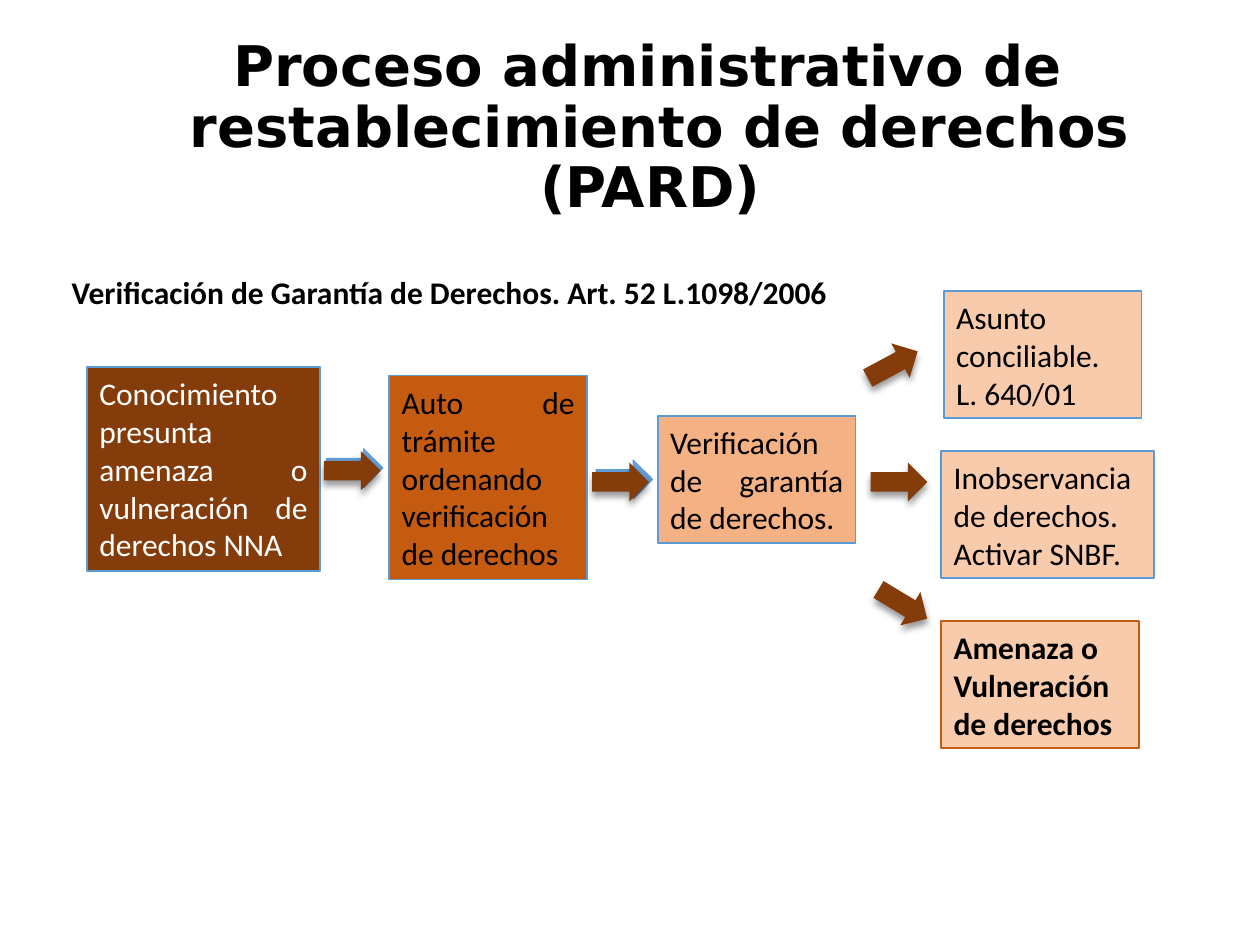
"""Builds the slide on the administrative process for restoring rights."""
from lxml.etree import SubElement
from pptx import Presentation
from pptx.dml.color import RGBColor
from pptx.enum.shapes import MSO_SHAPE as SHAPE
from pptx.enum.text import MSO_ANCHOR as ANCHOR, MSO_AUTO_SIZE as FIT, PP_ALIGN as ALIGN
from pptx.oxml.ns import qn
from pptx.util import Inches, Pt

COLORS = {
    "black": "000000",
    "white": "FFFFFF",
    "brown": "843C0B",
    "rust": "C55A11",
    "orange": "F4B183",
    "peach": "F8CBAD",
    "blue": "5B9BD5",
    "blue_light": "71A6DB",
    "blue_dark": "448ACA",
}


def rgb(name):
    return RGBColor.from_string(COLORS[name])


def write(tf, text, size=18, font="Calibri", color="black", bold=False,
          align=ALIGN.LEFT, spacing=None):
    tf.word_wrap = True
    for i, line in enumerate(text.split("\n")):
        p = tf.paragraphs[0] if i == 0 else tf.add_paragraph()
        p.alignment = align
        p.line_spacing = spacing
        r = p.add_run()
        r.text = line
        r.font.size = Pt(size)
        r.font.name = font
        r.font.bold = bold
        r.font.color.rgb = rgb(color)


class Deck:
    arrow_size = (0.45, 0.31)

    def __init__(self, prs):
        self.slide = prs.slides.add_slide(prs.slide_layouts[5])

    def title(self, text, x, y, w, h):
        sp = self.slide.shapes.title
        sp.left, sp.top, sp.width, sp.height = map(Inches, (x, y, w, h))
        tf = sp.text_frame
        write(tf, text, size=32, font="DejaVu Sans", bold=True,
              align=ALIGN.CENTER, spacing=0.9)
        tf.auto_size = FIT.NONE
        tf.vertical_anchor = ANCHOR.MIDDLE
        pPr = tf.paragraphs[0]._p.get_or_add_pPr()
        pPr.set("marL", str(Inches(0.2)))
        pPr.set("indent", str(Inches(-0.2)))

    def label(self, text, x, y, w, h, **style):
        sp = self.slide.shapes.add_textbox(*map(Inches, (x, y, w, h)))
        write(sp.text_frame, text, **style)
        sp.text_frame.auto_size = FIT.SHAPE_TO_FIT_TEXT

    def shape(self, kind, x, y, w, h):
        sp = self.slide.shapes.add_shape(kind, *map(Inches, (x, y, w, h)))
        sp.shadow.inherit = False
        return sp

    def box(self, text, x, y, w, h, fill, line="blue", **style):
        sp = self.shape(SHAPE.RECTANGLE, x, y, w, h)
        sp.fill.solid()
        sp.fill.fore_color.rgb = rgb(fill)
        sp.line.color.rgb = rgb(line)
        sp.line.width = Pt(1)
        write(sp.text_frame, text, **style)
        sp.text_frame.auto_size = FIT.SHAPE_TO_FIT_TEXT

    def back_arrow(self, x, y):
        sp = self.shape(SHAPE.RIGHT_ARROW, x, y, *self.arrow_size)
        sp.fill.gradient()
        sp.fill.gradient_angle = 270
        for stop, name in zip(sp.fill.gradient_stops, ("blue_light", "blue_dark")):
            stop.color.rgb = rgb(name)
        sp.line.color.rgb = rgb("blue")
        sp.line.width = Pt(0.5)

    def arrow(self, x, y, rotation=0):
        sp = self.shape(SHAPE.RIGHT_ARROW, x, y, *self.arrow_size)
        sp.rotation = rotation
        sp.fill.solid()
        sp.fill.fore_color.rgb = rgb("brown")
        sp.line.fill.background()
        effects = sp._element.spPr.find(qn("a:effectLst"))
        shadow = SubElement(effects, qn("a:outerShdw"), blurRad=str(Pt(4)),
                            dist=str(Pt(3)), dir="5400000", rotWithShape="0")
        color = SubElement(shadow, qn("a:srgbClr"), val=COLORS["black"])
        SubElement(color, qn("a:alpha"), val="40000")


def main():
    prs = Presentation()
    prs.slide_width, prs.slide_height = Inches(10), Inches(7.5)
    deck = Deck(prs)

    deck.title("Proceso administrativo de restablecimiento de derechos (PARD) ",
               0.69, 0.3, 8.9, 1.45)

    deck.box("Conocimiento presunta amenaza o vulneración de derechos NNA",
             0.69, 2.91, 1.85, 1.62, "brown", color="white", align=ALIGN.JUSTIFY)
    deck.box("Auto de trámite ordenando verificación de derechos",
             3.09, 2.98, 1.57, 1.62, "rust", align=ALIGN.JUSTIFY)
    deck.box("Asunto conciliable.\nL. 640/01", 7.49, 2.31, 1.57, 1.01, "peach")
    deck.box("Inobservancia de derechos. Activar SNBF.",
             7.47, 3.58, 1.69, 1.01, "peach")
    deck.box("Amenaza o Vulneración de derechos",
             7.47, 4.93, 1.57, 1.01, "peach", line="rust", bold=True)
    deck.box("Verificación de garantía de derechos.",
             5.22, 3.3, 1.57, 1.01, "orange", align=ALIGN.JUSTIFY)

    deck.label("Verificación de Garantía de Derechos. Art. 52 L.1098/2006",
               0.47, 2.12, 6.39, 0.4, bold=True)

    for x, y in ((2.59, 3.56), (4.73, 3.65)):
        deck.back_arrow(x, y)
    for x, y, rotation in ((6.91, 3.67, 0), (6.94, 4.64, 31.1), (6.86, 2.74, 331.8),
                           (2.57, 3.58, 0), (4.7, 3.67, 0)):
        deck.arrow(x, y, rotation)

    prs.save("out.pptx")


if __name__ == "__main__":
    main()
